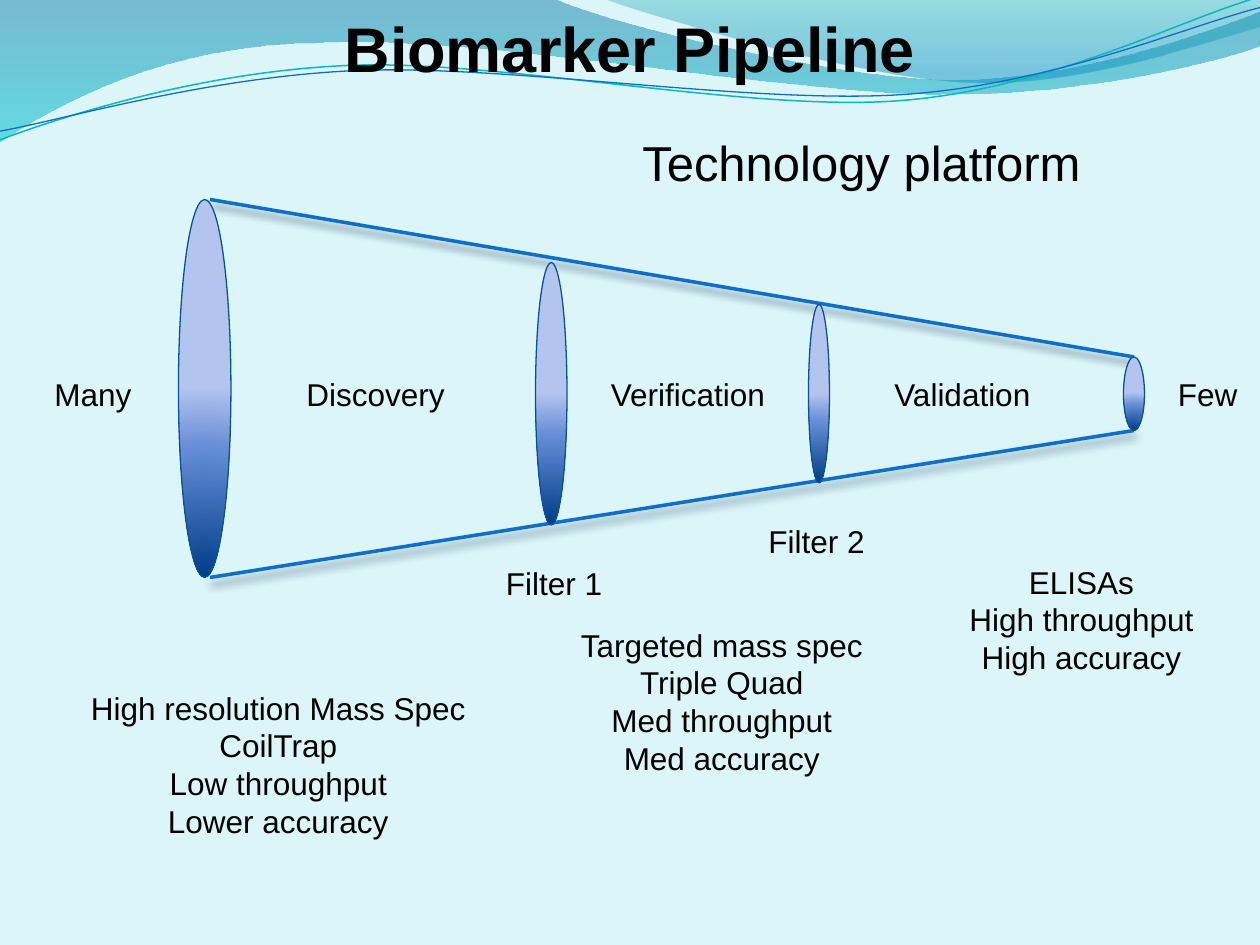
from lxml import etree
from pptx import Presentation
from pptx.dml.color import RGBColor
from pptx.enum import shapes, text
from pptx.oxml import ns
from pptx.util import Pt

FONT = "Arial"
COLORS = {
    "back": "DBF5F9", "text": "000000", "cone": "0F6FC6", "rim": "095295",
    "teal": "0AB8BF", "cone_shadow": "002041",
}
LENS_STOPS = [(0, "003D87", 100), (68, "668DD7", 100), (100, "B3C4EF", 100)]
LENS_CENTER = {"l": 50, "t": 130, "r": 50, "b": -30}
LENSES = [(117, 30, 216, 222), (648, 12, 42, 225), (315, 18, 150, 225), (468, 12, 102, 225)]
CONE_EDGES = [(120, 114, 648, 204), (120, 330, 648, 246)]

BANDS = [
    ((0, -0.7),
     [[(316.8, -0.7)],
      [(342.7, 12.2), (478.1, 45.4), (545.8, 45.4)],
      [(614.2, 45.4), (689.8, 18.7), (720, 6.5)],
      [(720.7, 25.9)],
      [(707.8, 31.7), (626.4, 54.7), (537.1, 54)],
      [(447.8, 54), (275, 20.2), (185, 24.5)],
      [(92.9, 25.2), (33.1, 59.8), (-0.7, 81.4)],
      [(0, -0.7)]],
     [(0, "0074A1", 45), (100, "00C6CF", 55)]),
    ((344.9, -0.7),
     [[(366.5, 7.9), (491, 44.6), (553.7, 46.8)],
      [(616.3, 49.7), (691.9, 23), (720, 15.1)],
      [(720, 0)],
      [(344.9, -0.7)]],
     [(0, "00A1A9", 30), (80, "008BBF", 45)]),
]
WAVES = [
    ((0, 79.9),
     [[(34.6, 67), (113.8, 41), (199.4, 37.4)],
      [(284.4, 33.8), (427, 64.1), (513.4, 57.6)],
      [(599.8, 51.1), (675.4, 10.8), (718.6, -1.4)]], "teal", 0.85),
    ((0, 74.9),
     [[(33.8, 69.1), (118.1, 43.9), (203.8, 40.3)],
      [(290.2, 36.7), (429.8, 59.8), (516.2, 54)],
      [(601.9, 48.2), (677.5, 15.1), (720, 4.3)]], "cone", 0.75),
]
LABELS = [
    ("Technology platform", 360, 72, 268, 41, 28),
    ("Many", 24, 211, 59, 29, 18),
    ("Few", 666, 211, 50, 29, 18),
    ("Filter 1", 282, 319, 70, 29, 18),
    ("Filter 2", 432, 295, 70, 29, 18),
    ("Discovery", 168, 211, 94, 29, 18),
    ("Verification", 342, 211, 104, 29, 18),
    ("Validation", 504, 211, 94, 29, 18),
]
PLATFORMS = [
    (["High resolution Mass Spec", "CoilTrap", "Low throughput", "Lower accuracy"],
     True, 42, 390, 234, 94),
    (["Targeted mass spec", "Triple Quad", "Med throughput", "Med accuracy"],
     False, 324, 354, 177, 94),
    (["ELISAs", "High throughput", "High accuracy"], False, 546, 318, 144, 73),
]


def rgb(name):
    return RGBColor.from_string(COLORS[name])


def child(parent, tag, **attrs):
    values = {key: str(value) for key, value in attrs.items()}
    return etree.SubElement(parent, ns.qn(tag), values)


def set_gradient(sp, stops, center=None):
    grad = etree.Element(ns.qn("a:gradFill"), {"rotWithShape": "1"})
    stop_list = child(grad, "a:gsLst")
    for pos, color, alpha in stops:
        clr = child(child(stop_list, "a:gs", pos=pos * 1000), "a:srgbClr", val=color)
        if alpha < 100:
            child(clr, "a:alpha", val=alpha * 1000)
    if center:
        radial = child(grad, "a:path", **{"path": "circle"})
        child(radial, "a:fillToRect", **{side: v * 1000 for side, v in center.items()})
    else:
        child(grad, "a:lin", ang=5400000, scaled=1)
    sp._element.spPr.insert(2, grad)


def set_line(sp, color, width):
    sp.line.color.rgb = rgb(color)
    sp.line.width = Pt(width)


def add_shadow(sp, color):
    effects = child(sp._element.spPr, "a:effectLst")
    shadow = child(effects, "a:outerShdw", blurRad=Pt(4.5), dist=Pt(3),
                   dir=5400000, rotWithShape=0)
    child(child(shadow, "a:srgbClr", val=COLORS[color]), "a:alpha", val=48000)


def bend(sp, segments):
    steps = iter(list(sp._element.iter(ns.qn("a:lnTo"))))
    for segment in segments:
        group = [next(steps) for _ in segment]
        if len(group) == 3:
            curve = etree.Element(ns.qn("a:cubicBezTo"))
            group[0].addprevious(curve)
            for step in group:
                curve.append(step[0])
                step.getparent().remove(step)


def add_curve(s, start, segments, closed):
    builder = s.shapes.build_freeform(Pt(start[0]), Pt(start[1]))
    points = [(Pt(x), Pt(y)) for segment in segments for x, y in segment]
    builder.add_line_segments(points, close=closed)
    sp = builder.convert_to_shape()
    bend(sp, segments)
    sp.shadow.inherit = False
    return sp


def add_band(s, start, segments, stops):
    sp = add_curve(s, start, segments, True)
    set_gradient(sp, stops)
    sp.line.fill.background()


def add_wave(s, start, segments, color, width):
    sp = add_curve(s, start, segments, False)
    sp.fill.background()
    set_line(sp, color, width)


def add_edge(s, x1, y1, x2, y2):
    sp = s.shapes.add_connector(shapes.MSO_CONNECTOR.STRAIGHT, Pt(x1), Pt(y1), Pt(x2), Pt(y2))
    set_line(sp, "cone", 2)
    add_shadow(sp, "cone_shadow")


def add_lens(s, center_x, width, height, center_y):
    sp = s.shapes.add_shape(shapes.MSO_SHAPE.OVAL, Pt(center_x - width / 2),
                            Pt(center_y - height / 2), Pt(width), Pt(height))
    set_gradient(sp, LENS_STOPS, LENS_CENTER)
    set_line(sp, "rim", 0.75)
    sp.shadow.inherit = False


def write(tf, lines, size, align, bold=False):
    for i, line in enumerate(lines):
        p = tf.paragraphs[0] if i == 0 else tf.add_paragraph()
        p.text = line
        p.alignment = align
        p.font.name = FONT
        p.font.size = Pt(size)
        p.font.bold = bold
        p.font.color.rgb = rgb("text")


def add_text(s, lines, box, size=18, align=text.PP_ALIGN.LEFT, wrap=False):
    tf = s.shapes.add_textbox(*map(Pt, box)).text_frame
    tf.word_wrap = wrap
    tf.auto_size = text.MSO_AUTO_SIZE.SHAPE_TO_FIT_TEXT
    write(tf, lines, size, align)


def set_title(s, title):
    sp = s.shapes.title
    sp.left, sp.top, sp.width, sp.height = Pt(0), Pt(0), Pt(720), Pt(54)
    sp.text_frame.vertical_anchor = text.MSO_ANCHOR.MIDDLE
    write(sp.text_frame, [title], 36, text.PP_ALIGN.CENTER, bold=True)
    s.shapes._spTree.append(sp._element)


def main():
    prs = Presentation()
    prs.slide_width, prs.slide_height = Pt(720), Pt(540)
    s = prs.slides.add_slide(prs.slide_layouts[5])
    s.background.fill.solid()
    s.background.fill.fore_color.rgb = rgb("back")
    for band in BANDS:
        add_band(s, *band)
    for wave in WAVES:
        add_wave(s, *wave)
    set_title(s, "Biomarker Pipeline")
    for edge in CONE_EDGES:
        add_edge(s, *edge)
    for lens in LENSES:
        add_lens(s, *lens)
    for label, *box, size in LABELS:
        add_text(s, [label], box, size)
    for lines, wrap, *box in PLATFORMS:
        add_text(s, lines, box, align=text.PP_ALIGN.CENTER, wrap=wrap)
    prs.save("out.pptx")


if __name__ == "__main__":
    main()
